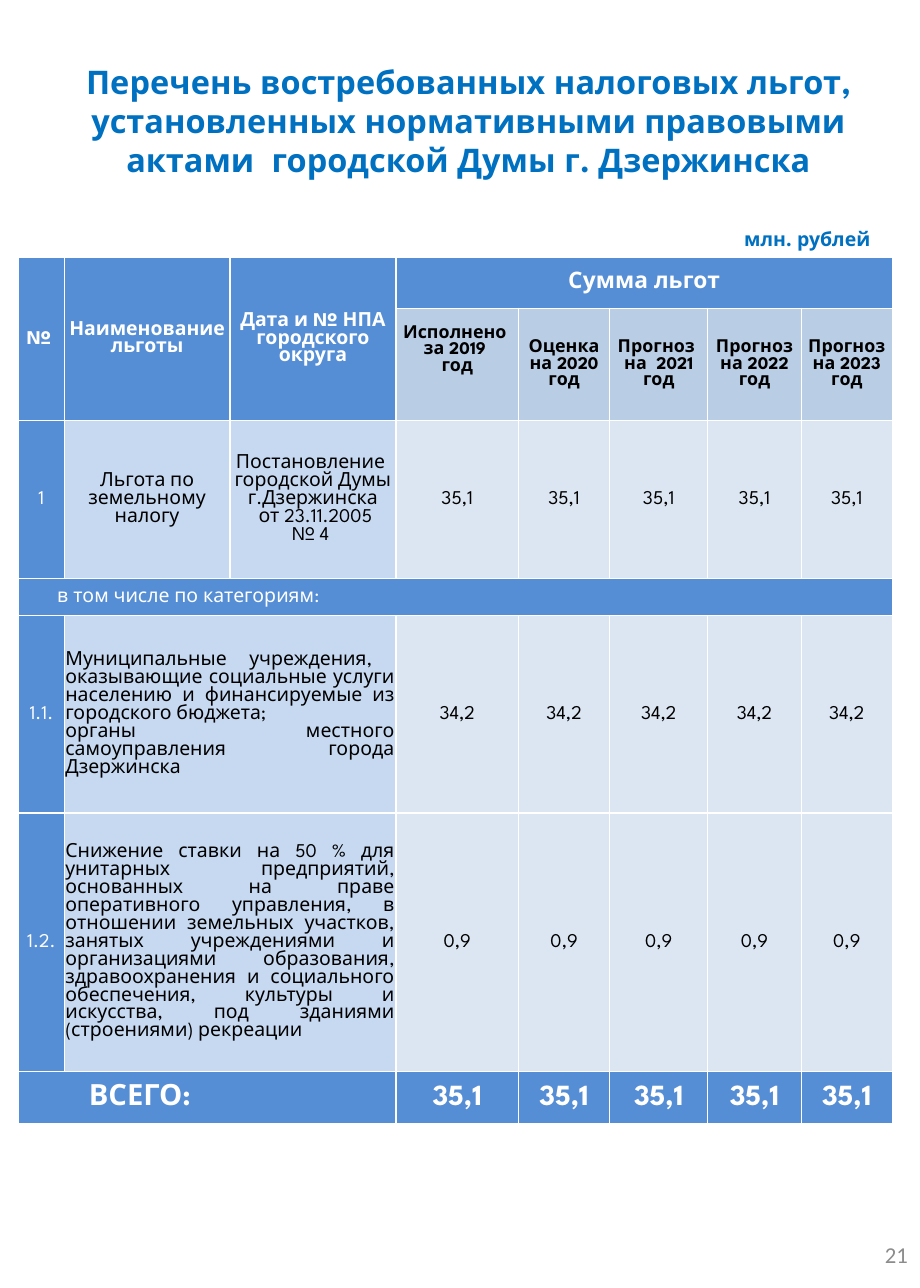
import pptx
import pptx.util
import pptx.dml.color
import pptx.enum.text
import pptx.oxml
from dataclasses import dataclass

Inches = pptx.util.Inches
Pt = pptx.util.Pt
ALIGN = pptx.enum.text.PP_ALIGN
ANCHOR = pptx.enum.text.MSO_ANCHOR

TITLE = ("Перечень востребованных налоговых льгот, установленных "
         "нормативными правовыми актами  городской Думы г. Дзержинска")
UNITS = "млн. рублей"
PAGE_NUMBER = "21"
HEADINGS = ["№ ", "Наименование льготы", "Дата и № НПА городского округа"]
SUM_HEADING = "Сумма льгот"
YEARS = ["Исполнено \nза 2019 \nгод", "Оценка на 2020 год", "Прогноз \nна  2021 год",
         "Прогноз на 2022 год", "Прогноз на 2023 год"]
BENEFIT = ["1", "Льгота по земельному налогу",
           "Постановление \nгородской Думы г.Дзержинска\n от 23.11.2005\n№ 4 "]
SECTION = "в том числе по категориям:"
CATEGORIES = [
    ("1.1.", "Муниципальные учреждения,  оказывающие социальные услуги населению "
             "и финансируемые из городского бюджета;\n"
             "органы местного самоуправления города Дзержинска "),
    ("1.2.", "Снижение ставки на 50 % для унитарных предприятий, основанных на праве "
             "оперативного управления, в отношении земельных участков, занятых "
             "учреждениями и организациями образования, здравоохранения и социального "
             "обеспечения, культуры и искусства, под зданиями (строениями) рекреации"),
]
TOTAL = "ВСЕГО:"
AMOUNTS = {2: "35,1", 4: "34,2", 5: "0,9", 6: "35,1"}
COLUMN_WIDTHS = [0.39, 1.42, 1.42, 1.05, 0.78, 0.84, 0.8, 0.78]
ROW_HEIGHTS = [0.44, 0.96, 1.35, 0.32, 1.69, 2.2, 0.45]
FIRST_YEAR = 3


@dataclass(frozen=True)
class Theme:
    font: str = "League Spartan"
    number_font: str = "Calibri"
    accent: str = "0070C0"
    strong: str = "558ED5"
    year: str = "B9CDE5"
    label: str = "C6D9F1"
    amount: str = "DCE6F2"
    white: str = "FFFFFF"
    black: str = "000000"
    gray: str = "8C8C8C"
    title_size: int = 20
    total_size: int = 18
    large_size: int = 14
    body_size: int = 12
    year_size: int = 11


THEME = Theme()


def rgb(color):
    return pptx.dml.color.RGBColor.from_string(color)


def write(frame, text, size, color, bold=False, align=ALIGN.CENTER, font=THEME.font):
    frame.text = text
    frame.word_wrap = True
    for para in frame.paragraphs:
        para.alignment = align
        for span in para.runs:
            span.font.name = font
            span.font.size = Pt(size)
            span.font.bold = bold
            span.font.color.rgb = rgb(color)


def add_label(page, bounds, text, size, color, **style):
    box = page.shapes.add_textbox(*map(Inches, bounds))
    write(box.text_frame, text, size, color, align=ALIGN.RIGHT, **style)
    return box


def add_borders(cell):
    for side in ("lnL", "lnR", "lnT", "lnB"):
        line = pptx.oxml.parse_xml(
            f'<a:{side} xmlns:a="http://schemas.openxmlformats.org/drawingml/2006/main" '
            f'w="12700"><a:solidFill><a:srgbClr val="{THEME.white}"/></a:solidFill></a:{side}>')
        cell._tc.get_or_add_tcPr().append(line)


def fill_cell(table, row, column, text, fill, color=THEME.black, size=THEME.body_size,
              bold=False, align=ALIGN.CENTER, indent=0.01):
    cell = table.cell(row, column)
    write(cell.text_frame, text, size, color, bold, align)
    cell.fill.solid()
    cell.fill.fore_color.rgb = rgb(fill)
    cell.vertical_anchor = ANCHOR.MIDDLE
    cell.margin_left = Inches(indent)


def build_table(page):
    frame = page.shapes.add_table(
        len(ROW_HEIGHTS), len(COLUMN_WIDTHS), Inches(0.16), Inches(2.2),
        Inches(sum(COLUMN_WIDTHS)), Inches(sum(ROW_HEIGHTS)))
    table = frame.table
    for column, width in zip(table.columns, COLUMN_WIDTHS):
        column.width = Inches(width)
    for row, height in zip(table.rows, ROW_HEIGHTS):
        row.height = Inches(height)
    for cell in table.iter_cells():
        cell.margin_left = cell.margin_right = cell.margin_top = Inches(0.01)
        cell.margin_bottom = 0
        cell.fill.solid()
        cell.fill.fore_color.rgb = rgb(THEME.strong)
        add_borders(cell)

    last = len(COLUMN_WIDTHS) - 1
    merges = [((0, column), (1, column)) for column in range(FIRST_YEAR)]
    merges += [((0, FIRST_YEAR), (0, last)), ((3, 0), (3, last)),
               ((4, 1), (4, 2)), ((5, 1), (5, 2)), ((6, 0), (6, 2))]
    for start, end in merges:
        table.cell(*start).merge(table.cell(*end))

    strong = dict(fill=THEME.strong, color=THEME.white)
    for column, text in enumerate(HEADINGS):
        fill_cell(table, 0, column, text, bold=True, **strong)
    fill_cell(table, 0, FIRST_YEAR, SUM_HEADING, size=THEME.large_size, bold=True, **strong)
    for column, text in enumerate(YEARS, FIRST_YEAR):
        fill_cell(table, 1, column, text, THEME.year, size=THEME.year_size, bold=True)
    completed = table.cell(1, FIRST_YEAR)
    completed.vertical_anchor = ANCHOR.TOP
    completed.margin_top = Inches(0.15)

    number, *details = BENEFIT
    fill_cell(table, 2, 0, number, **strong)
    for column, text in enumerate(details, 1):
        fill_cell(table, 2, column, text, THEME.label)
    fill_cell(table, 3, 0, SECTION, align=ALIGN.LEFT, indent=0.33, **strong)
    for row, (number, text) in enumerate(CATEGORIES, 4):
        fill_cell(table, row, 0, number, **strong)
        fill_cell(table, row, 1, text, THEME.label, align=ALIGN.JUSTIFY)

    total = dict(strong, size=THEME.total_size, bold=True)
    fill_cell(table, 6, 0, TOTAL, align=ALIGN.LEFT, indent=0.6, **total)
    for row, amount in AMOUNTS.items():
        style = total if row == 6 else dict(fill=THEME.amount)
        for column in range(FIRST_YEAR, last + 1):
            fill_cell(table, row, column, amount, **style)


def main():
    deck = pptx.Presentation()
    deck.slide_width, deck.slide_height = Pt(567), Pt(793.75)
    page = deck.slides.add_slide(deck.slide_layouts[5])
    title = page.shapes.title
    title.left, title.top, title.width, title.height = map(Inches, (0.15, 0.4, 7.72, 0.94))
    write(title.text_frame, TITLE, THEME.title_size, THEME.accent, bold=True)
    title.text_frame.vertical_anchor = ANCHOR.MIDDLE
    title.text_frame.margin_top = Inches(0.37)
    add_label(page, (5.66, 1.89, 1.89, 0.31), UNITS, THEME.body_size, THEME.accent, bold=True)
    build_table(page)
    number = add_label(page, (6.03, 10.44, 1.84, 0.59), PAGE_NUMBER, THEME.large_size,
                       THEME.gray, font=THEME.number_font)
    number.text_frame.vertical_anchor = ANCHOR.MIDDLE
    deck.save("out.pptx")


if __name__ == "__main__":
    main()
